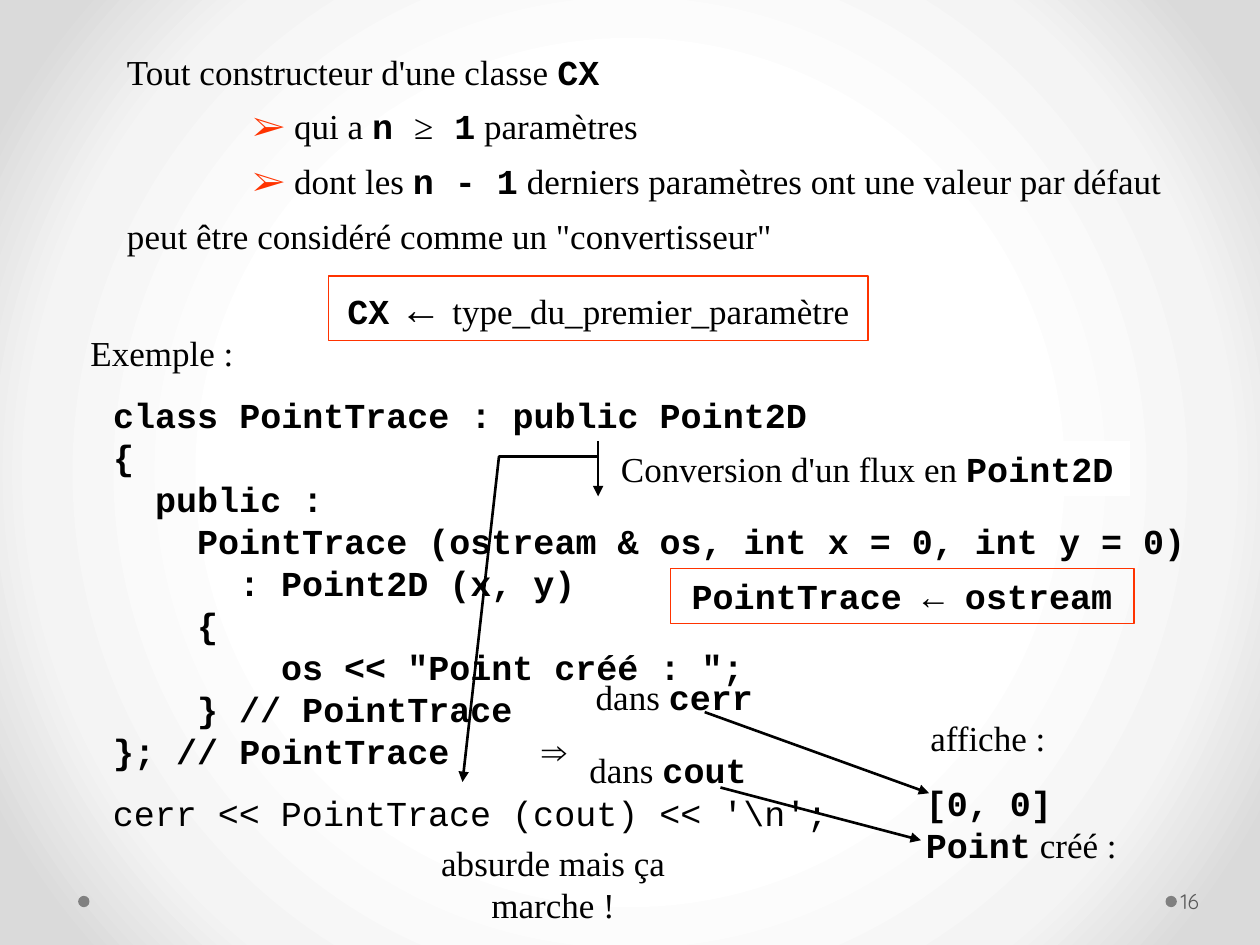
"""Build the slide on converting constructors in C++."""
from dataclasses import dataclass
from typing import NamedTuple

from lxml.etree import SubElement
from pptx import Presentation
from pptx.dml.color import RGBColor
from pptx.enum.shapes import MSO_SHAPE
from pptx.enum.text import MSO_ANCHOR, MSO_AUTO_SIZE, PP_ALIGN
from pptx.oxml import parse_xml
from pptx.oxml.ns import nsdecls, qn
from pptx.util import Inches, Pt

BLACK = RGBColor(0, 0, 0)
WHITE = RGBColor(0xFF, 0xFF, 0xFF)
RED = RGBColor(0xFF, 0x33, 0x00)
GREY = RGBColor(0x80, 0x80, 0x80)
DARK = RGBColor(0x59, 0x59, 0x59)
SERIF, MONO, SANS = "Times New Roman", "Courier New", "Quicksand"
STEP = 1 / 3


class Run(NamedTuple):
    text: str
    font: str = SERIF
    bold: bool = False
    color: RGBColor = BLACK
    size: float = 20


class Line(NamedTuple):
    runs: list
    indent: float = 0


class Box(NamedTuple):
    left: float
    top: float
    width: float
    height: float


@dataclass
class Callout:
    kind: MSO_SHAPE
    box: Box
    runs: list
    points: list


def code(text: str) -> Run:
    """Return a bold monospaced run."""
    return Run(text, MONO, True)


def place(box: Box) -> list:
    """Return the four lengths of a box."""
    return [Inches(n) for n in box]


def write(shape, lines: list, *, align=PP_ALIGN.LEFT, anchor=MSO_ANCHOR.MIDDLE,
          space: float = 1, wrap: bool = False, side: float = 0.1) -> None:
    """Fill a shape with formatted lines."""
    frame = shape.text_frame
    frame.word_wrap = wrap
    frame.auto_size = MSO_AUTO_SIZE.NONE if wrap else MSO_AUTO_SIZE.SHAPE_TO_FIT_TEXT
    frame.vertical_anchor = anchor
    frame.margin_left = frame.margin_right = Inches(side)
    for row, line in enumerate(lines):
        para = frame.add_paragraph() if row else frame.paragraphs[0]
        para.alignment = align
        para.line_spacing = space
        if line.indent:
            props = para._p.get_or_add_pPr()
            props.set("marL", str(Inches(line.indent)))
            props.set("indent", "0")
        for item in line.runs:
            run = para.add_run()
            run.text = item.text
            run.font.name = item.font
            run.font.bold = item.bold
            run.font.size = Pt(item.size)
            run.font.color.rgb = item.color


def label(slide, box: Box, lines: list, **style) -> None:
    """Add a text box."""
    write(slide.shapes.add_textbox(*place(box)), lines, **style)


def frame(slide, box: Box, runs: list) -> None:
    """Add a red outlined rectangle with centred text."""
    shape = slide.shapes.add_shape(MSO_SHAPE.RECTANGLE, *place(box))
    shape.shadow.inherit = False
    shape.fill.background()
    shape.line.color.rgb = RED
    shape.line.width = Pt(0.75)
    write(shape, [Line(runs)], align=PP_ALIGN.CENTER)


def call(slide, item: Callout) -> None:
    """Add a callout whose leader ends in an arrowhead."""
    shape = slide.shapes.add_shape(item.kind, *place(item.box))
    shape.shadow.inherit = False
    shape.fill.solid()
    shape.fill.fore_color.rgb = WHITE
    shape.line.color.rgb = BLACK
    shape.line.width = Pt(1.5)
    for spot, value in enumerate(item.points):
        shape.adjustments[spot] = value
    SubElement(shape.line._get_or_add_ln(), qn("a:tailEnd"), type="triangle")
    write(shape, [Line(item.runs)], anchor=MSO_ANCHOR.TOP)


def dot(slide, left: float) -> None:
    """Add a small grey footer dot."""
    shape = slide.shapes.add_shape(MSO_SHAPE.OVAL, *place(Box(left, 7.11, 0.09, 0.09)))
    shape.shadow.inherit = False
    shape.fill.solid()
    shape.fill.fore_color.rgb = GREY
    shape.line.fill.background()


def shade(slide) -> None:
    """Give the background its radial gradient."""
    slide.background.fill.gradient()
    old = next(slide._element.iter(qn("a:gradFill")))
    stops = "".join(
        f'<a:gs pos="{pos}000"><a:srgbClr val="{tint}"/></a:gs>'
        for pos, tint in [(50, "FFFFFF"), (76, "F4F4F4"), (92, "DADADA")])
    new = parse_xml(
        f'<a:gradFill {nsdecls("a")} rotWithShape="1"><a:gsLst>{stops}</a:gsLst>'
        '<a:path path="circle"><a:fillToRect l="50000" t="50000" r="50000" b="50000"/>'
        '</a:path></a:gradFill>')
    old.getparent().replace(old, new)


INTRO = [
    Line([Run("Tout constructeur d'une classe "), code("CX")]),
    Line([Run("➢ ", color=RED), Run("qui a "), code("n "), Run("≥"),
          code(" 1"), Run(" paramètres")], 1),
    Line([Run("➢", color=RED), Run(" dont les "), code("n - 1"),
          Run(" derniers paramètres ont une valeur par défaut")], 1),
    Line([Run('peut être considéré comme un "convertisseur"')]),
]
SOURCE = [
    (0, "class PointTrace : public Point2D"),
    (0, "{"),
    (1, "public :"),
    (2, "PointTrace (ostream & os, int x = 0, int y = 0)"),
    (3, ": Point2D (x, y)"),
    (2, "{"),
    (4, 'os << "Point créé : ";'),
    (2, "} // PointTrace"),
    (0, "}; // PointTrace"),
]
STREAMS = [
    Callout(MSO_SHAPE.LINE_CALLOUT_1_NO_BORDER, Box(4.58, 5.89, 1.46, 0.45),
            [Run("dans "), code("cout")], [0.8, 0.78, 1.73, 1.87]),
    Callout(MSO_SHAPE.LINE_CALLOUT_1_NO_BORDER, Box(4.63, 5.31, 1.46, 0.45),
            [Run("dans "), code("cerr")], [0.76, 0.66, 2.19, 1.88]),
]
FLOW = Callout(MSO_SHAPE.LINE_CALLOUT_2_ACCENT_BAR, Box(4.83, 3.5, 4.14, 0.44),
               [Run("Conversion d'un flux en "), code("Point2D")],
               [0.28, -0.02, 0.28, -0.21, 6.15, -0.28])


def main() -> None:
    """Draw and save the slide."""
    deck = Presentation()
    deck.slide_width, deck.slide_height = Inches(10), Inches(7.5)
    slide = deck.slides.add_slide(deck.slide_layouts[6])
    shade(slide)
    for left in (9.25, 0.62):
        dot(slide, left)
    for item in STREAMS:
        call(slide, item)
    mid = PP_ALIGN.CENTER
    label(slide, Box(9.34, 6.95, 0.61, 0.4),
          [Line([Run("16", SANS, color=DARK, size=12)])], wrap=True, side=0.03)
    label(slide, Box(0.91, 0.24, 8.43, 1.85), INTRO, space=1.3)
    frame(slide, Box(2.61, 2.19, 4.28, 0.51),
          [code("CX"), Run(" ← ", size=24), Run("type_du_premier_paramètre")])
    label(slide, Box(0.62, 2.58, 1.5, 0.43), [Line([Run("Exemple :")])],
          anchor=MSO_ANCHOR.TOP, wrap=True)
    label(slide, Box(0.8, 3.07, 8.87, 3.1),
          [Line([code(text)], level * STEP) for level, text in SOURCE])
    frame(slide, Box(5.32, 4.51, 3.68, 0.44), [code("PointTrace ← ostream")])
    label(slide, Box(4.16, 5.74, 0.48, 0.43), [Line([Run("⇒")])], align=mid)
    label(slide, Box(0.72, 6.23, 6.03, 0.43),
          [Line([Run("cerr << PointTrace (cout) << '\\n';", MONO)])], align=mid)
    label(slide, Box(7.25, 6.15, 1.8, 0.77),
          [Line([code("[0, 0]")]), Line([code("Point"), Run(" créé :")])])
    label(slide, Box(7.28, 5.64, 1.12, 0.43), [Line([Run("affiche :")])], align=mid)
    label(slide, Box(2.88, 6.8, 3.02, 0.43), [Line([Run("absurde mais ça marche !")])],
          align=mid, wrap=True, side=0.4)
    call(slide, FLOW)
    deck.save("out.pptx")


if __name__ == "__main__":
    main()
